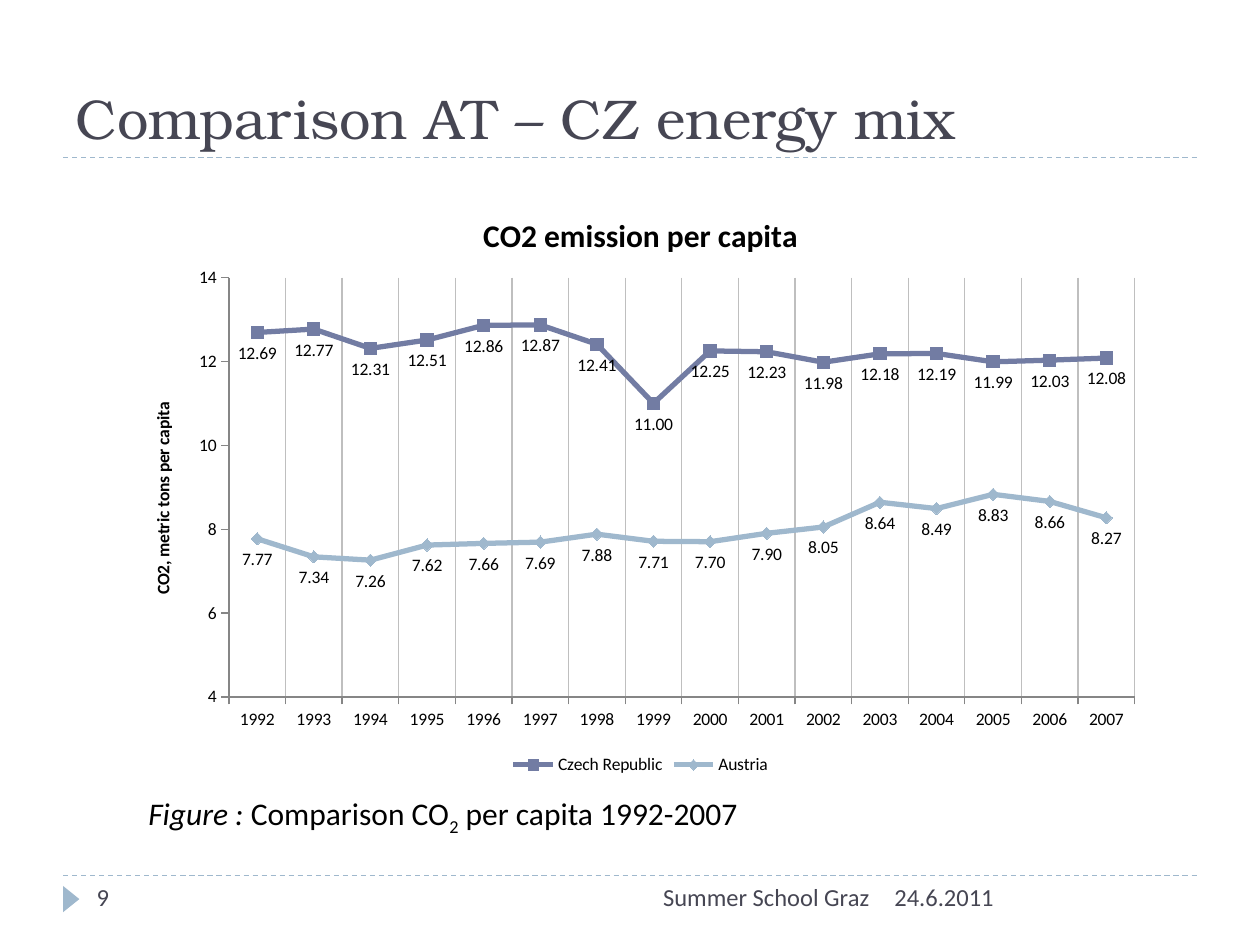
from lxml.etree import SubElement
from pptx import Presentation
from pptx.chart.data import CategoryChartData
from pptx.dml.color import RGBColor
from pptx.enum.chart import (XL_CHART_TYPE, XL_LABEL_POSITION, XL_LEGEND_POSITION,
                             XL_MARKER_STYLE, XL_TICK_MARK)
from pptx.enum.dml import MSO_LINE
from pptx.enum.shapes import MSO_CONNECTOR, MSO_SHAPE
from pptx.enum.text import MSO_ANCHOR, PP_ALIGN
from pptx.oxml import parse_xml
from pptx.oxml.ns import nsdecls, qn
from pptx.util import Cm, Pt

COLORS = {"heading": "464653", "text": "000000", "accent": "9FB8CD",
          "czech": "727CA3", "grid": "BFBFBF", "axis": "868686"}
BODY_FONT = "Calibri"
TITLE = "Comparison AT – CZ energy mix"
CHART_TITLE = "CO2 emission per capita"
AXIS_TITLE = "CO2, metric tons per capita"
YEARS = [str(year) for year in range(1992, 2008)]
SERIES = [
    ("Czech Republic", "czech", XL_MARKER_STYLE.SQUARE, 7,
     [12.69, 12.77, 12.31, 12.51, 12.86, 12.87, 12.41, 11.00,
      12.25, 12.23, 11.98, 12.18, 12.19, 11.99, 12.03, 12.08]),
    ("Austria", "accent", XL_MARKER_STYLE.DIAMOND, 7,
     [7.77, 7.34, 7.26, 7.62, 7.66, 7.69, 7.88, 7.71,
      7.70, 7.90, 8.05, 8.64, 8.49, 8.83, 8.66, 8.27]),
]
# Text, italic, baseline shift in thousandths of a percent
CAPTION = [("Figure :", True, 0), (" Comparison CO", False, 0),
           ("2", False, -25000), (" per capita 1992-2007", False, 0)]
# Text, left, width, alignment
FOOTER = [("24.6.2011", 17.78, 6.35, PP_ALIGN.LEFT),
          ("Summer School Graz", 8.05, 9.73, PP_ALIGN.RIGHT),
          ("9", 1.7, 5.51, PP_ALIGN.LEFT)]
FOOTER_TOP = 17.65
RULE_TOPS = [FOOTER_TOP, 3.18]
PLOT_AREA = {"x": 0.1, "y": 0.15, "w": 0.88, "h": 0.71}


def color(name):
    return RGBColor.from_string(COLORS[name])


def set_font(font, size, color_name="text", name=BODY_FONT, bold=None):
    font.size, font.name, font.bold = Pt(size), name, bold
    font.color.rgb = color(color_name)


def set_line(line, color_name, width):
    line.color.rgb = color(color_name)
    line.width = Pt(width)


def add_text(page, left, top, width, height):
    """Add a wrapping text box and return its first paragraph."""
    frame = page.shapes.add_textbox(Cm(left), Cm(top), Cm(width), Cm(height)).text_frame
    frame.word_wrap = True
    return frame.paragraphs[0]


def add_rules(page):
    for top in RULE_TOPS:
        rule = page.shapes.add_connector(
            MSO_CONNECTOR.STRAIGHT, Cm(1.27), Cm(top), Cm(24.13), Cm(top))
        set_line(rule.line, "accent", 0.75)
        rule.line.dash_style = MSO_LINE.DASH
        SubElement(rule._element.spPr, qn("a:effectLst"))


def add_title(page):
    title = page.shapes.title
    title.left, title.top, title.width, title.height = Cm(1.27), Cm(0.43), Cm(22.86), Cm(2.74)
    title.text_frame.text = TITLE
    title.text_frame.vertical_anchor = MSO_ANCHOR.BOTTOM
    para = title.text_frame.paragraphs[0]
    para.alignment = PP_ALIGN.LEFT
    set_font(para.font, 32, "heading", "TeX Gyre Bonum")


def add_footer(page):
    marker = page.shapes.add_shape(
        MSO_SHAPE.ISOSCELES_TRIANGLE, Cm(1.17), Cm(17.96), Cm(0.53), Cm(0.33))
    marker.rotation = 90
    marker.shadow.inherit = False
    marker.fill.solid()
    marker.fill.fore_color.rgb = color("accent")
    marker.line.fill.background()
    for text, left, width, alignment in FOOTER:
        para = add_text(page, left, FOOTER_TOP, width, 1.02)
        para.text, para.alignment = text, alignment
        set_font(para.font, 14, "heading")


def add_caption(page):
    para = add_text(page, 2.74, 15.88, 13.13, 1.8)
    set_font(para.font, 18)
    for text, italic, baseline in CAPTION:
        span = para.add_run()
        span.text, span.font.italic = text, italic
        if baseline:
            span.font._element.set("baseline", str(baseline))


def set_chart_text(holder, text, size):
    holder.text_frame.text = text
    set_font(holder.text_frame.paragraphs[0].font, size, bold=True)


def fix_plot_area(chart):
    """Give the inner plot area a fixed place, as fractions of the chart."""
    plot_area = chart._chartSpace.chart.plotArea
    for old in plot_area.findall(qn("c:layout")):
        plot_area.remove(old)
    places = "".join(f'<c:{key} val="{value}"/>' for key, value in PLOT_AREA.items())
    plot_area.insert(0, parse_xml(
        f'<c:layout {nsdecls("c")}><c:manualLayout><c:layoutTarget val="inner"/>'
        f'<c:xMode val="edge"/><c:yMode val="edge"/>{places}</c:manualLayout></c:layout>'))


def style_series(series, color_name, marker, size):
    series.smooth = False
    set_line(series.format.line, color_name, 3)
    series.marker.style, series.marker.size = marker, size
    series.marker.format.fill.solid()
    series.marker.format.fill.fore_color.rgb = color(color_name)
    set_line(series.marker.format.line, color_name, 0.75)
    labels = series.data_labels
    labels.show_value = True
    labels.position = XL_LABEL_POSITION.BELOW
    labels.number_format, labels.number_format_is_linked = "0.00", False
    set_font(labels.font, 10)


def add_emission_chart(page):
    data = CategoryChartData(number_format="0.00")
    data.categories = YEARS
    for name, *_, values in SERIES:
        data.add_series(name, values)
    chart = page.shapes.add_chart(XL_CHART_TYPE.LINE_MARKERS, Cm(2.54), Cm(3.81),
                                  Cm(20.75), Cm(11.91), data).chart
    set_font(chart.font, 10)
    chart.has_title = True
    set_chart_text(chart.chart_title, CHART_TITLE, 18)
    chart.has_legend = True
    chart.legend.position = XL_LEGEND_POSITION.BOTTOM
    chart.legend.include_in_layout = False
    chart.plots[0].vary_by_categories = False
    for axis in (chart.category_axis, chart.value_axis):
        axis.major_tick_mark = XL_TICK_MARK.OUTSIDE
        set_line(axis.format.line, "axis", 0.75)
    chart.category_axis.has_major_gridlines = True
    set_line(chart.category_axis.major_gridlines.format.line, "grid", 0.75)
    values = chart.value_axis
    values.has_major_gridlines = False
    values.minimum_scale, values.maximum_scale, values.major_unit = 4, 14, 2
    values.tick_labels.number_format = "0"
    values.tick_labels.number_format_is_linked = False
    set_chart_text(values.axis_title, AXIS_TITLE, 10)
    for series, (_, color_name, marker, size, _) in zip(chart.plots[0].series, SERIES):
        style_series(series, color_name, marker, size)
    fix_plot_area(chart)


def main():
    deck = Presentation()
    deck.slide_width, deck.slide_height = Cm(25.4), Cm(19.05)
    page = deck.slides.add_slide(deck.slide_layouts[5])
    add_rules(page)
    add_title(page)
    add_footer(page)
    add_emission_chart(page)
    add_caption(page)
    deck.save("out.pptx")


if __name__ == "__main__":
    main()
